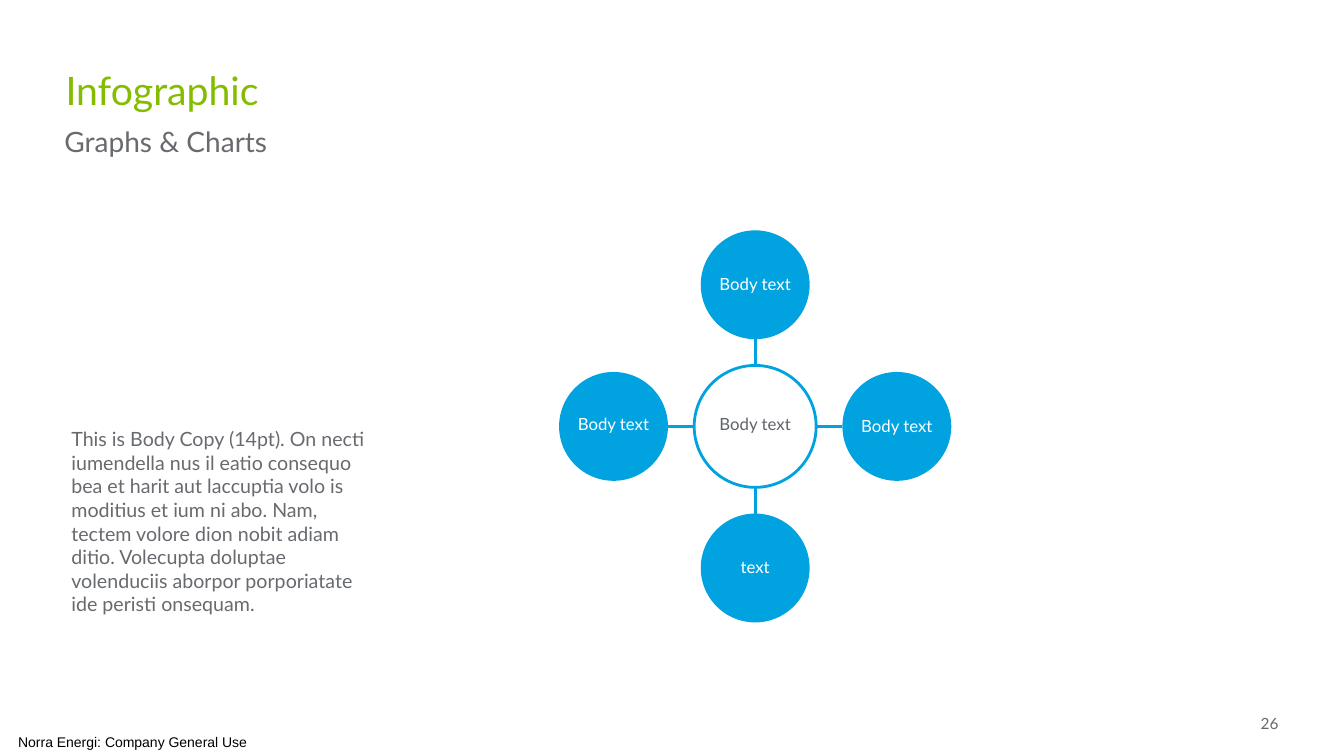
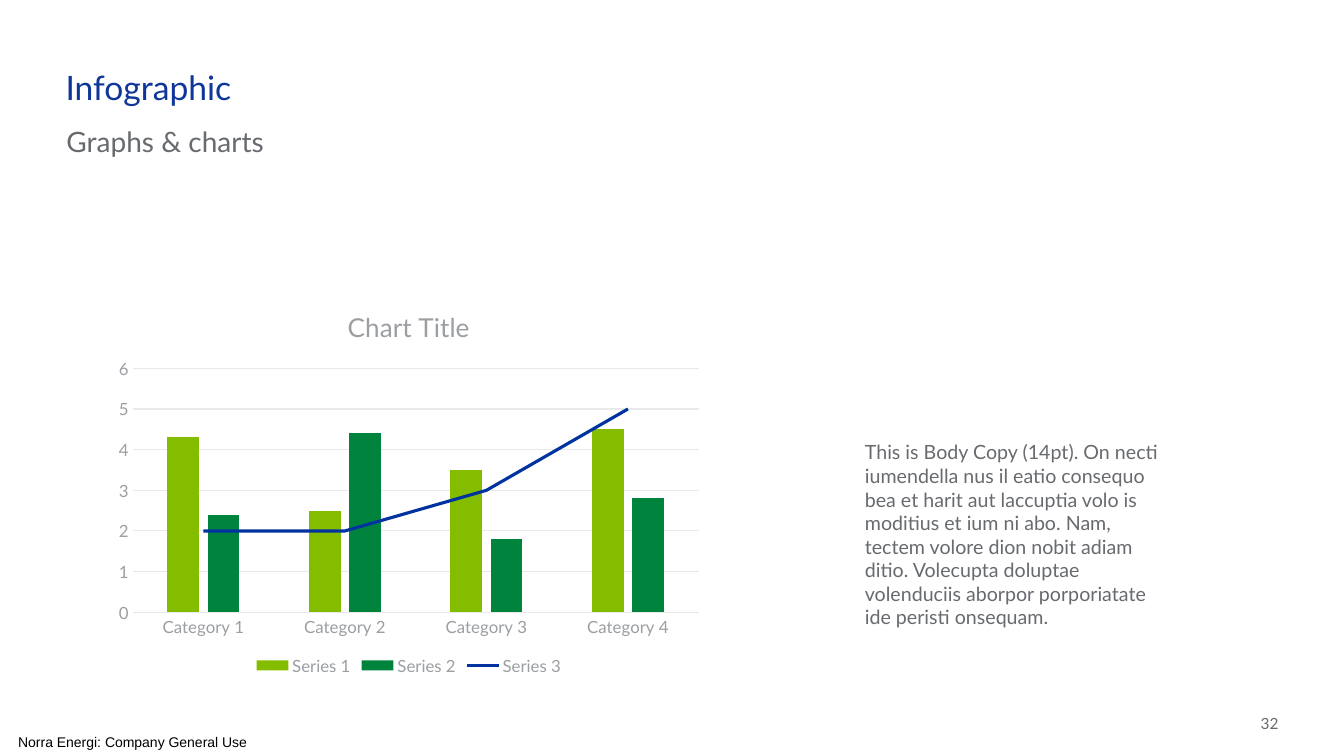
import math
from dataclasses import dataclass
from typing import Any

import lxml.etree
import pptx
import pptx.chart.data
import pptx.dml.color
import pptx.enum.chart
import pptx.enum.shapes
import pptx.enum.text
import pptx.oxml.ns
import pptx.util

RGBColor = pptx.dml.color.RGBColor
WHITE = RGBColor(0xFF, 0xFF, 0xFF)
BLACK = RGBColor(0, 0, 0)
GREY = RGBColor(0x67, 0x6A, 0x6E)
HUB_GREY = RGBColor(0x5F, 0x63, 0x69)
CHART_GREY = RGBColor(0x9B, 0x9E, 0xA2)
GRID_GREY = RGBColor(0xE8, 0xE9, 0xE9)
CYAN = RGBColor(0x00, 0xA3, 0xE0)
LIME = RGBColor(0x84, 0xBD, 0x00)
GREEN = RGBColor(0x00, 0x84, 0x3D)
NAVY = RGBColor(0x00, 0x33, 0xA0)
TITLE_BLUE = RGBColor(0x0F, 0x36, 0x99)

FONT = "Lato"
FOOTER_FONT = "Arial"
FOOTER = "Norra Energi: Company General Use"
BODY = (
    "This is Body Copy (14pt). On necti iumendella nus il eatio consequo bea et harit "
    "aut laccuptia volo is moditius et ium ni abo. Nam, tectem volore dion nobit adiam "
    "ditio. Volecupta doluptae volenduciis aborpor porporiatate ide peristi onsequam."
)

SLIDE_W = pptx.util.Inches(13.33)
SLIDE_H = pptx.util.Inches(7.5)
ROWS = 75
CELL = SLIDE_H / ROWS

LEFT = pptx.enum.text.PP_ALIGN.LEFT
CENTER = pptx.enum.text.PP_ALIGN.CENTER
RIGHT = pptx.enum.text.PP_ALIGN.RIGHT
TOP = pptx.enum.text.MSO_ANCHOR.TOP
MIDDLE = pptx.enum.text.MSO_ANCHOR.MIDDLE

HUB_COL, HUB_ROW = 74.9, 42.3
HUB_SIZE, NODE_SIZE = 12.1, 10.8
ORBIT = 14.05


def grid(cells: float) -> int:
    return round(cells * CELL)


@dataclass(frozen=True)
class Box:
    col: float
    row: float
    cols: float
    rows: float

    def emu(self) -> tuple[int, int, int, int]:
        return grid(self.col), grid(self.row), grid(self.cols), grid(self.rows)


@dataclass(frozen=True)
class Style:
    size: float
    color: RGBColor = GREY
    font: str = FONT
    align: Any = LEFT
    anchor: Any = TOP
    inset: float = 0


@dataclass(frozen=True)
class Page:
    number: int
    title: Style
    subtitle: str
    subtitle_col: float
    body: Box


@dataclass(frozen=True)
class Node:
    text: str
    angle: float
    spacing: Any


@dataclass(frozen=True)
class Series:
    name: str
    values: tuple[float, ...]
    color: RGBColor


NODES = [
    Node("Body text", 270, 0.9),
    Node("Body text", 0, pptx.util.Pt(13)),
    Node("text", 90, 0.9),
    Node("Body text", 180, pptx.util.Pt(10)),
]
CATEGORIES = [f"Category {n}" for n in range(1, 5)]
SERIES = [
    Series("Series 1", (4.3, 2.5, 3.5, 4.5), LIME),
    Series("Series 2", (2.4, 4.4, 1.8, 2.8), GREEN),
    Series("Series 3", (2, 2, 3, 5), NAVY),
]


def set_font(font: Any, size: float, color: RGBColor, name: str = FONT) -> None:
    font.size = pptx.util.Pt(size)
    font.name = name
    font.color.rgb = color


def write(sp: Any, text: str, style: Style, spacing: Any = None) -> None:
    tf = sp.text_frame
    tf.text = text
    tf.word_wrap = True
    tf.vertical_anchor = style.anchor
    tf.margin_left = tf.margin_right = grid(style.inset)
    tf.margin_top = tf.margin_bottom = grid(min(style.inset, 0.5))
    p = tf.paragraphs[0]
    p.alignment = style.align
    if spacing is not None:
        p.line_spacing = spacing
    for r in p.runs:
        set_font(r.font, style.size, style.color, style.font)


def add_text(s: Any, box: Box, text: str, style: Style) -> None:
    write(s.shapes.add_textbox(*box.emu()), text, style)


def add_page(prs: Any, page: Page) -> Any:
    s = prs.slides.add_slide(prs.slide_layouts[6])
    add_text(s, Box(6.5, 6.6, 49.5, 5.7), "Infographic", page.title)
    add_text(s, Box(page.subtitle_col, 11.9, 49.5, 5.7), page.subtitle, Style(20, inset=1))
    add_text(s, page.body, BODY, Style(14, inset=1))
    add_text(s, Box(122.9, 70.5, 3.9, 2.5), str(page.number),
             Style(11, align=RIGHT, anchor=MIDDLE))
    add_text(s, Box(1.8, 72.3, 27.2, 2.7), FOOTER,
             Style(10, BLACK, FOOTER_FONT, anchor=MIDDLE))
    return s


def add_circle(s: Any, col: float, row: float, size: float) -> Any:
    box = Box(col - size / 2, row - size / 2, size, size)
    sp = s.shapes.add_shape(pptx.enum.shapes.MSO_SHAPE.OVAL, *box.emu())
    sp.shadow.inherit = False
    return sp


def add_spoke(s: Any, dx: float, dy: float) -> None:
    start, end = HUB_SIZE / 2, ORBIT - NODE_SIZE / 2
    cxn = s.shapes.add_connector(
        pptx.enum.shapes.MSO_CONNECTOR.STRAIGHT,
        grid(HUB_COL + dx * start), grid(HUB_ROW + dy * start),
        grid(HUB_COL + dx * end), grid(HUB_ROW + dy * end),
    )
    cxn.line.color.rgb = CYAN
    cxn.line.width = pptx.util.Pt(2)
    lxml.etree.SubElement(cxn._element.spPr, pptx.oxml.ns.qn("a:effectLst"))


def add_hub_diagram(s: Any) -> None:
    hub = add_circle(s, HUB_COL, HUB_ROW, HUB_SIZE)
    hub.fill.background()
    hub.line.color.rgb = CYAN
    hub.line.width = pptx.util.Pt(2)
    label = Style(12, HUB_GREY, align=CENTER, anchor=MIDDLE, inset=0.1)
    write(hub, "Body text", label, pptx.util.Pt(10))
    label = Style(12, WHITE, align=CENTER, anchor=MIDDLE, inset=0.1)
    for node in NODES:
        angle = math.radians(node.angle)
        dx, dy = math.cos(angle), math.sin(angle)
        add_spoke(s, dx, dy)
        sp = add_circle(s, HUB_COL + ORBIT * dx, HUB_ROW + ORBIT * dy, NODE_SIZE)
        sp.fill.solid()
        sp.fill.fore_color.rgb = CYAN
        sp.line.fill.background()
        write(sp, node.text, label, node.spacing)


def move_last_series_to_line(chart: Any) -> None:
    qn = pptx.oxml.ns.qn
    bars = chart.plots[0]._element
    ser = bars.findall(qn("c:ser"))[-1]
    for flag in ser.findall(qn("c:invertIfNegative")):
        ser.remove(flag)
    line = lxml.etree.SubElement(bars.getparent(), qn("c:lineChart"))
    bars.addnext(line)
    for tag, val in (("c:grouping", "standard"), ("c:varyColors", "0")):
        lxml.etree.SubElement(line, qn(tag)).set("val", val)
    line.append(ser)
    lxml.etree.SubElement(line, qn("c:marker")).set("val", "1")
    for axis in bars.findall(qn("c:axId")):
        lxml.etree.SubElement(line, qn("c:axId")).set("val", axis.get("val"))


def style_axes(chart: Any) -> None:
    for axis in (chart.category_axis, chart.value_axis):
        axis.major_tick_mark = pptx.enum.chart.XL_TICK_MARK.NONE
        axis.minor_tick_mark = pptx.enum.chart.XL_TICK_MARK.NONE
        set_font(axis.tick_labels.font, 12, CHART_GREY)
    value_axis = chart.value_axis
    value_axis.minimum_scale, value_axis.maximum_scale, value_axis.major_unit = 0, 6, 1
    value_axis.has_major_gridlines = True
    value_axis.format.line.fill.background()
    for line in (chart.category_axis.format.line, value_axis.major_gridlines.format.line):
        line.color.rgb = GRID_GREY
        line.width = pptx.util.Pt(0.75)


def add_combined_chart(s: Any, box: Box) -> None:
    data = pptx.chart.data.CategoryChartData()
    data.categories = CATEGORIES
    for series in SERIES:
        data.add_series(series.name, series.values)
    kind = pptx.enum.chart.XL_CHART_TYPE.COLUMN_CLUSTERED
    chart = s.shapes.add_chart(kind, *box.emu(), data).chart
    set_font(chart.font, 10, GREY)
    chart.has_title = True
    tf = chart.chart_title.text_frame
    tf.text = "Chart Title"
    r = tf.paragraphs[0].runs[0]
    set_font(r.font, 18.6, CHART_GREY)
    r.font.bold = False
    chart.has_legend = True
    chart.legend.position = pptx.enum.chart.XL_LEGEND_POSITION.BOTTOM
    chart.legend.include_in_layout = False
    set_font(chart.legend.font, 12, CHART_GREY)
    style_axes(chart)

    move_last_series_to_line(chart)
    bars, line = chart.plots
    bars.vary_by_categories = False
    bars.gap_width, bars.overlap = 219, -27
    for ser, series in zip(bars.series, SERIES):
        ser.format.fill.solid()
        ser.format.fill.fore_color.rgb = series.color
    trend = line.series[0]
    trend.smooth = False
    trend.marker.style = pptx.enum.chart.XL_MARKER_STYLE.NONE
    trend.format.line.color.rgb = SERIES[-1].color
    trend.format.line.width = pptx.util.Pt(2.25)


def main() -> None:
    prs = pptx.Presentation()
    prs.slide_width, prs.slide_height = SLIDE_W, SLIDE_H
    diagram = Page(26, Style(28, LIME), "Graphs & Charts", 5.4, Box(6.1, 41.9, 31.6, 20))
    add_hub_diagram(add_page(prs, diagram))
    charts = Page(32, Style(24, TITLE_BLUE), "Graphs & charts", 5.6, Box(84.8, 43.2, 31.6, 20))
    add_combined_chart(add_page(prs, charts), Box(10.6, 28.8, 59.9, 38.6))
    prs.save("out.pptx")


if __name__ == "__main__":
    main()
